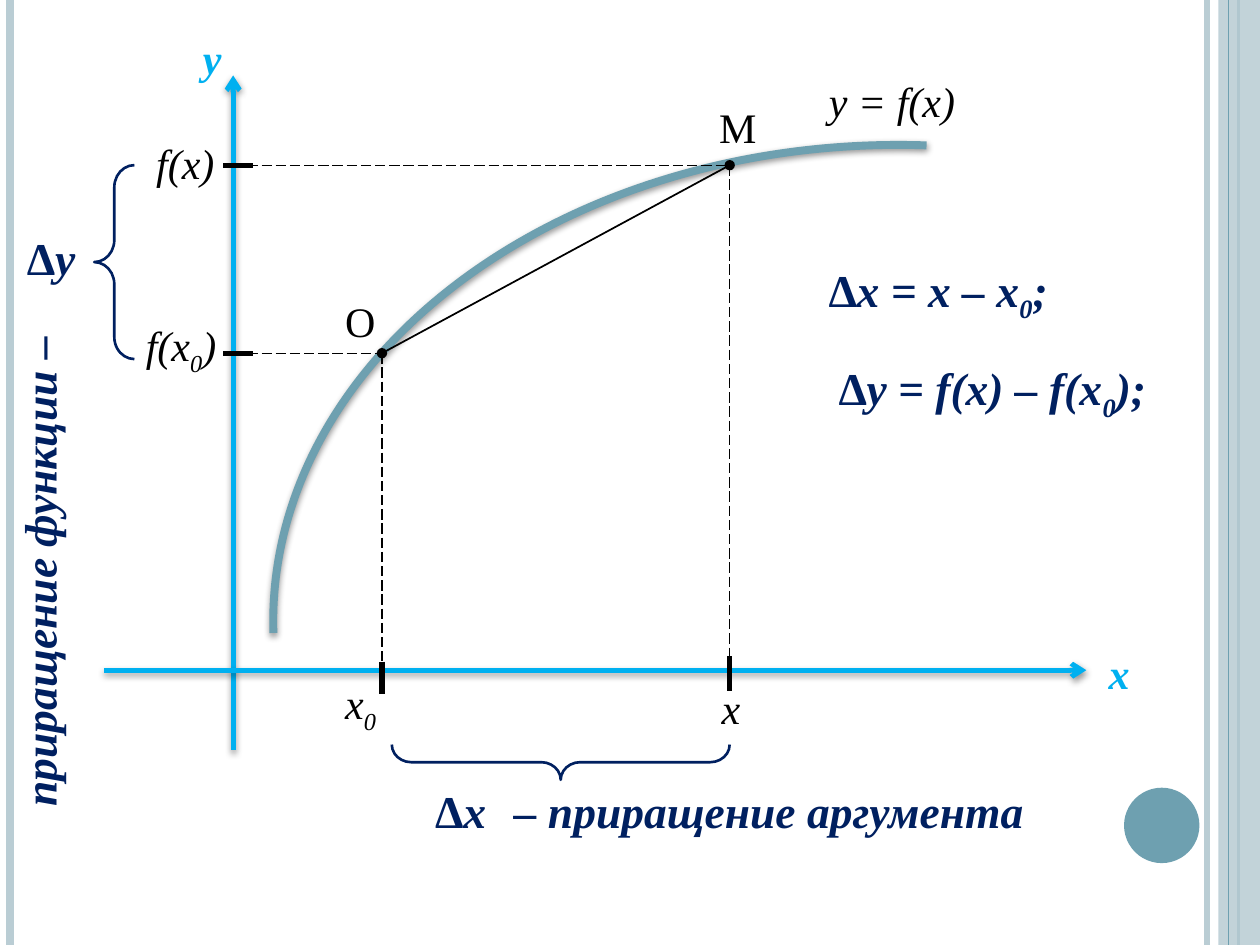
from dataclasses import dataclass

from lxml.etree import SubElement
from pptx import Presentation
from pptx.dml.color import RGBColor
from pptx.enum.dml import MSO_LINE
from pptx.enum.shapes import MSO_CONNECTOR, MSO_SHAPE
from pptx.enum.text import MSO_AUTO_SIZE
from pptx.oxml.ns import qn
from pptx.util import Cm, Pt


@dataclass(frozen=True)
class Theme:
    font: str = "Times New Roman"
    label_size: int = 24
    formula_size: int = 26
    black: str = "000000"
    navy: str = "002060"
    axis: str = "00B0F0"
    teal: str = "6EA0B0"
    pale: str = "BACDD4"


THEME = Theme()
SLIDE_WIDTH, SLIDE_HEIGHT = 25.4, 19.05
ORIGIN_X, ORIGIN_Y = 4.7, 13.51
X0, X = 7.7, 14.71
F_X0, F_X = 7.12, 3.33


def color(value):
    return RGBColor.from_string(value)


def set_effects(shape, shadow):
    properties = shape.element.spPr
    for old in properties.findall(qn("a:effectLst")):
        properties.remove(old)
    effects = SubElement(properties, qn("a:effectLst"))
    if shadow:
        outer = SubElement(effects, qn("a:outerShdw"), blurRad=str(Pt(4)),
                           dist=str(Pt(1.6)), dir="5400000", rotWithShape="0")
        tint = SubElement(outer, qn("a:srgbClr"), val=THEME.black)
        SubElement(tint, qn("a:alpha"), val="42000")


def add_line(slide, start, end, line_color, width, dashed=False,
             head=None, tail=None, shadow=False):
    connector = slide.shapes.add_connector(
        MSO_CONNECTOR.STRAIGHT, *map(Cm, start + end))
    connector.line.color.rgb = color(line_color)
    connector.line.width = Pt(width)
    if dashed:
        connector.line.dash_style = MSO_LINE.LONG_DASH
    outline = connector.element.spPr.find(qn("a:ln"))
    for tag, ending in (("a:headEnd", head), ("a:tailEnd", tail)):
        if ending:
            SubElement(outline, qn(tag), type=ending)
    set_effects(connector, shadow)


def add_filled(slide, kind, box, fill_color, opacity=100):
    shape = slide.shapes.add_shape(kind, *map(Cm, box))
    shape.shadow.inherit = False
    shape.fill.solid()
    shape.fill.fore_color.rgb = color(fill_color)
    shape.line.fill.background()
    if opacity < 100:
        tint = shape.element.spPr.find(qn("a:solidFill"))[0]
        SubElement(tint, qn("a:alpha"), val=str(opacity * 1000))


def add_outline(slide, kind, box, adjustments, line_color, width,
                rotation=0, shadow=False):
    shape = slide.shapes.add_shape(kind, *map(Cm, box))
    shape.rotation = rotation
    for index, value in enumerate(adjustments):
        shape.adjustments[index] = value
    shape.fill.background()
    shape.line.color.rgb = color(line_color)
    shape.line.width = Pt(width)
    set_effects(shape, shadow)


def add_text(slide, text, box, text_color=THEME.black, size=THEME.label_size,
             bold=False, italic=True, vertical=False):
    text_box = slide.shapes.add_textbox(*map(Cm, box))
    frame = text_box.text_frame
    frame.word_wrap = True
    frame.auto_size = MSO_AUTO_SIZE.SHAPE_TO_FIT_TEXT
    if vertical:
        text_box.element.txBody.find(qn("a:bodyPr")).set("vert", "vert270")
    paragraph = frame.paragraphs[0]
    font = paragraph.font
    font.name, font.size = THEME.font, Pt(size)
    font.bold, font.italic = bold, italic
    font.color.rgb = color(text_color)
    for index, part in enumerate(text.split("_")):
        run = paragraph.add_run()
        run.text = part
        if index % 2:
            run.font._element.set("baseline", "-25000")


def add_formula(slide, text, box, vertical=False):
    add_text(slide, text, box, THEME.navy, THEME.formula_size,
             bold=True, vertical=vertical)


def add_frame(slide):
    for left, line_color, width in ((24.33, THEME.pale, 3), (0.2, THEME.pale, 4.5),
                                    (24.97, THEME.teal, 1.5)):
        add_line(slide, (left, 0), (left, SLIDE_HEIGHT), line_color, width)
    add_filled(slide, MSO_SHAPE.RECTANGLE, (24.56, 0, 0.84, SLIDE_HEIGHT),
               THEME.pale, opacity=87)
    add_line(slide, (24.77, 0), (24.77, SLIDE_HEIGHT), THEME.teal, 0.75)
    add_filled(slide, MSO_SHAPE.OVAL, (22.66, 15.88, 1.52, 1.52), THEME.teal)


def add_graph(slide):
    for start, end in (((ORIGIN_X, 15.11), (ORIGIN_X, 1.52)),
                       ((2.1, ORIGIN_Y), (21.9, ORIGIN_Y))):
        add_line(slide, start, end, THEME.axis, 2.75, tail="arrow", shadow=True)
    add_outline(slide, MSO_SHAPE.ARC, (8.51, -0.08, 19.2, 25.2),
                (161.35, 2.04), THEME.teal, 4.5, rotation=270, shadow=True)
    for x, y, tick_top, tick_bottom in ((X0, F_X0, 13.34, 14), (X, F_X, 13.23, 13.92)):
        add_line(slide, (4.5, y), (5.1, y), THEME.black, 3)
        add_line(slide, (ORIGIN_X, y), (x, y), THEME.black, 0.75, dashed=True)
        add_line(slide, (x, tick_top), (x, tick_bottom), THEME.black, 3)
        add_line(slide, (x, y), (x, 13.72), THEME.black, 0.75, dashed=True)
    add_line(slide, (X0, F_X0), (X, F_X), THEME.black, 1, head="oval", tail="oval")
    for box, rotation in (((10.95, 11.96, 0.71, 6.81), 270), ((1.9, F_X, 0.81, 3.91), 0)):
        add_outline(slide, MSO_SHAPE.LEFT_BRACE, box, (0.55, 0.5),
                    THEME.navy, 1.5, rotation)


def add_labels(slide):
    for text, box in (("f(х_0_)", (2.69, 6.32, 2.26, 1.3)),
                      ("f(х)", (2.9, 2.64, 2.26, 1.3)),
                      ("х_0", (6.71, 13.54, 1.4, 1.27)),
                      ("х", (14.3, 13.64, 1.07, 1.3)),
                      ("y = f(х)", (16.46, 1.4, 3.38, 1.27))):
        add_text(slide, text, box)
    for text, left, top in (("О", 6.71, 5.84), ("М", 14.25, 1.93)):
        add_text(slide, text, (left, top, 1.07, 1.3), italic=False)
    for text, left, top in (("х", 22.1, 12.93), ("y", 3.84, 0.53)):
        add_text(slide, text, (left, top, 1.07, 1.3), THEME.axis, bold=True)
    for text, box in (("∆x", (8.53, 15.67, 2.21, 1.37)),
                      ("∆y", (0.3, 4.52, 2.21, 1.4)),
                      ("– приращение аргумента", (10.11, 15.67, 11.61, 1.37)),
                      ("∆x = х – х_0_;", (16.46, 5.16, 5, 1.37)),
                      ("∆y = f(х) – f(х_0_);", (16.66, 7.14, 6.81, 1.37))):
        add_formula(slide, text, box)
    add_formula(slide, " приращение функции –", (0.1, 4.93, 1.63, 11.81), vertical=True)


def main():
    presentation = Presentation()
    presentation.slide_width = Cm(SLIDE_WIDTH)
    presentation.slide_height = Cm(SLIDE_HEIGHT)
    slide = presentation.slides.add_slide(presentation.slide_layouts[6])
    add_frame(slide)
    add_graph(slide)
    add_labels(slide)
    presentation.save("out.pptx")


if __name__ == "__main__":
    main()
